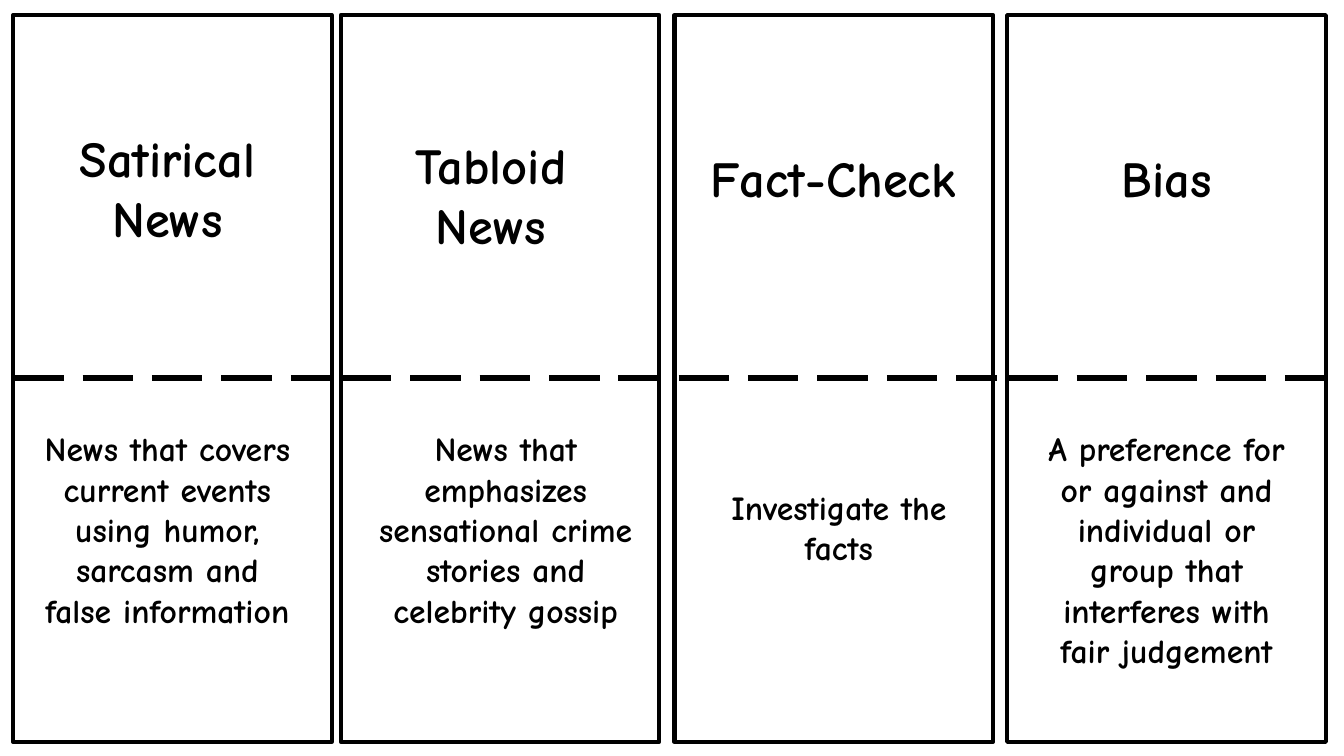
from pptx import Presentation
from pptx.dml.color import RGBColor
from pptx.enum.dml import MSO_LINE
from pptx.enum.shapes import MSO_CONNECTOR, MSO_SHAPE
from pptx.enum.text import MSO_AUTO_SIZE, PP_ALIGN
from pptx.oxml.ns import qn
from pptx.util import Pt
from lxml.etree import SubElement

PX = 9144  # 100 px to the inch
BLACK = RGBColor(0x00, 0x00, 0x00)
WHITE = RGBColor(0xFF, 0xFF, 0xFF)
FONT = "Comic Neue"

CARD_TOP, CARD_WIDTH, CARD_HEIGHT = 15, 316, 721
FOLD_Y = 375

# card left, fold left, term and its box, definition and its box
CARDS = [
    (13, 13, "Satirical News", (31, 121, 270, 131),
     "News that covers current events using humor, sarcasm and false information",
     (31, 420, 270, 293)),
    (338, 338, "Tabloid News", (352, 128, 270, 131),
     "News that emphasizes sensational crime stories and celebrity gossip",
     (364, 420, 275, 252)),
    (669, 673, "Fact-Check", (664, 141, 325, 71),
     "Investigate the facts", (683, 478, 298, 91)),
    (999, 999, "Bias", (1022, 141, 270, 71),
     "A preference for or against and individual or group that interferes with fair judgement",
     (1022, 420, 270, 252)),
]

deck = Presentation()
deck.slide_width = 1333 * PX
deck.slide_height = 750 * PX
page = deck.slides.add_slide(deck.slide_layouts[6])


def add_text(text, *, area, size):
    box = page.shapes.add_textbox(*(length * PX for length in area))
    frame = box.text_frame
    frame.word_wrap = True
    frame.auto_size = MSO_AUTO_SIZE.SHAPE_TO_FIT_TEXT
    para = frame.paragraphs[0]
    para.alignment = PP_ALIGN.CENTER
    span = para.add_run()
    span.text = text
    span.font.name = FONT
    span.font.size = Pt(size)
    span.font.bold = True
    span.font.color.rgb = BLACK


for card_left, fold_left, term, term_area, definition, definition_area in CARDS:
    card = page.shapes.add_shape(
        MSO_SHAPE.RECTANGLE,
        card_left * PX, CARD_TOP * PX, CARD_WIDTH * PX, CARD_HEIGHT * PX)
    card.shadow.inherit = False
    card.fill.solid()
    card.fill.fore_color.rgb = WHITE
    card.line.color.rgb = BLACK
    card.line.width = Pt(3)

    fold = page.shapes.add_connector(
        MSO_CONNECTOR.STRAIGHT,
        fold_left * PX, FOLD_Y * PX, (fold_left + CARD_WIDTH) * PX, FOLD_Y * PX)
    fold.line.color.rgb = BLACK
    fold.line.width = Pt(4.5)
    fold.line.dash_style = MSO_LINE.LONG_DASH
    SubElement(fold._element.spPr, qn("a:effectLst"))

    add_text(term, area=term_area, size=36)
    add_text(definition, area=definition_area, size=24)

deck.save("out.pptx")
